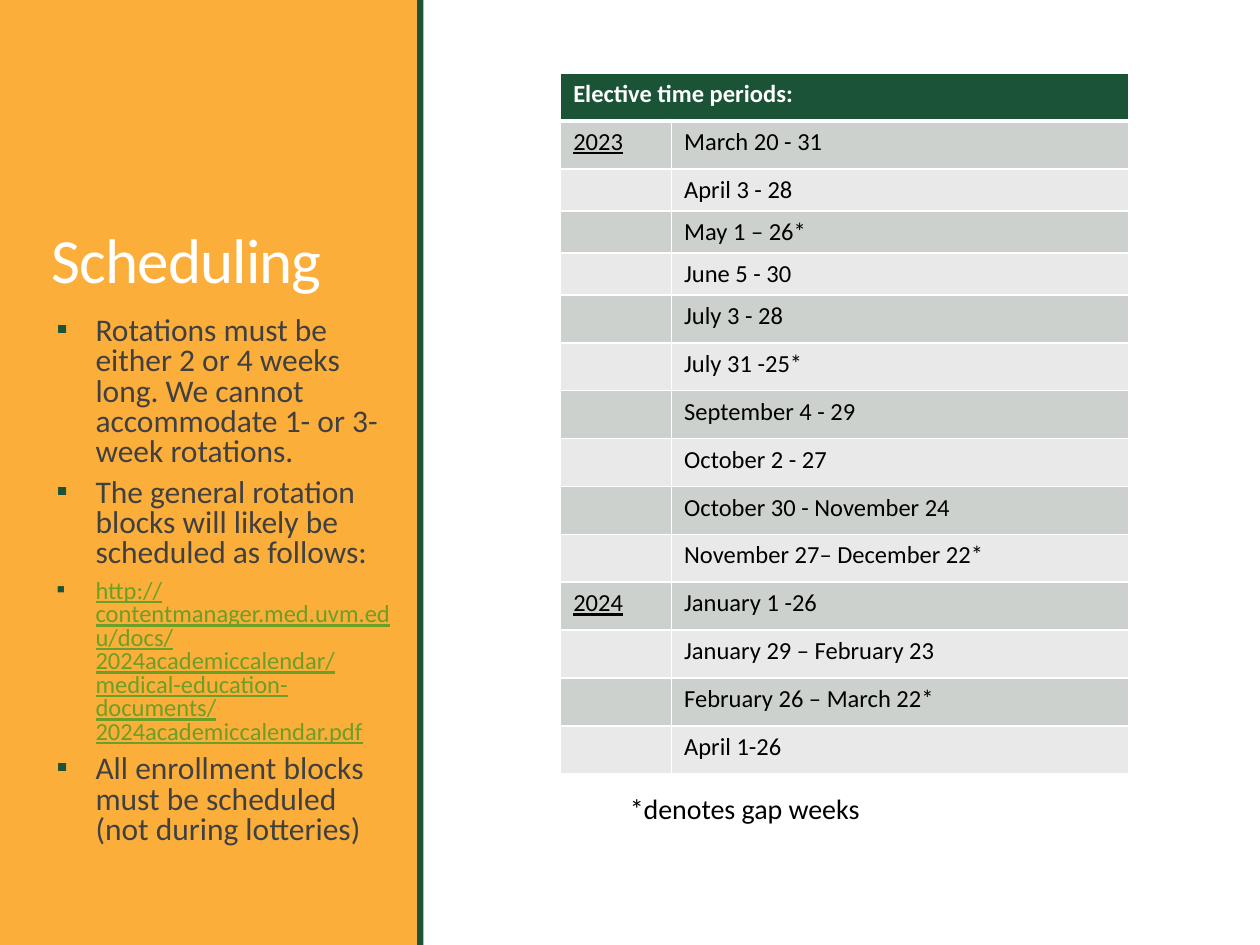
import pptx
import pptx.util
import pptx.dml.color
import pptx.enum.shapes
import pptx.enum.text
import pptx.oxml.ns
from lxml import etree

Inches = pptx.util.Inches
Pt = pptx.util.Pt
GREEN, WHITE, GREY, LINK = "1B5337", "FFFFFF", "404040", "6B9F25"
BANDS = ["CDD1CE", "E8E9E8"]
NOTES = [
    ("Rotations must be either 2 or 4 weeks long. We cannot accommodate 1- or 3-week rotations.", 18, GREY),
    ("The general rotation blocks will likely be scheduled as follows:", 18, GREY),
    ("http://contentmanager.med.uvm.edu/docs/2024academiccalendar/medical-education-documents/2024academiccalendar.pdf", 14, LINK),
    ("All enrollment blocks must be scheduled (not during lotteries)", 18, GREY),
]
YEARS = {
    "2023": [
        "March 20 - 31", "April 3 - 28", "May 1 – 26*", "June 5 - 30",
        "July 3 - 28", "July 31 -25*", "September 4 - 29", "October 2 - 27",
        "October 30 - November 24", "November 27– December 22*",
    ],
    "2024": ["January 1 -26", "January 29 – February 23", "February 26 – March 22*", "April 1-26"],
}


def color(code):
    return pptx.dml.color.RGBColor.from_string(code)


def node(parent, tag, **attrs):
    return etree.SubElement(parent, pptx.oxml.ns.qn(tag), attrs)


def style(para, size, code, bold=False, line=False):
    for run in para.runs:
        font = run.font
        font.name, font.size = "Calibri", Pt(size)
        font.bold, font.underline = bold, line
        font.color.rgb = color(code)


def add_bar(slide, left, width, code):
    bar = slide.shapes.add_shape(
        pptx.enum.shapes.MSO_SHAPE.RECTANGLE, Inches(left), 0, Inches(width), Inches(7.5))
    bar.shadow.inherit = False
    bar.fill.solid()
    bar.fill.fore_color.rgb = color(code)
    bar.line.fill.background()


def set_title(slide, text):
    title = slide.shapes.title
    title.left, title.top = Inches(0.31), Inches(1.79)
    title.width, title.height = Inches(2.62), Inches(0.98)
    frame = title.text_frame
    frame.text = text
    frame.vertical_anchor = pptx.enum.text.MSO_ANCHOR.TOP
    para = frame.paragraphs[0]
    para.alignment = pptx.enum.text.PP_ALIGN.LEFT
    para.line_spacing = 0.85
    style(para, 36, WHITE)
    para.runs[0].font._element.set("spc", "-50")


def add_box(slide, left, top, width, height):
    box = slide.shapes.add_textbox(Inches(left), Inches(top), Inches(width), Inches(height))
    box.text_frame.word_wrap = True
    return box.text_frame


def add_bullet(para):
    props = para._p.get_or_add_pPr()
    props.set("marL", str(Inches(0.53)))
    props.set("indent", str(Inches(-0.31)))
    node(node(props, "a:buClr"), "a:srgbClr", val=GREEN)
    node(props, "a:buFont", typeface="Calibri")
    node(props, "a:buChar", char="▪")


def add_notes(slide):
    frame = add_box(slide, 0.13, 2.47, 3.11, 4.42)
    frame.text = "\n".join(text for text, size, code in NOTES)
    for i, (para, (text, size, code)) in enumerate(zip(frame.paragraphs, NOTES)):
        add_bullet(para)
        para.line_spacing = 0.8
        para.space_before = Pt(2 if i else 0)
        para.space_after = Pt(4)
        style(para, size, code, line=code == LINK)


def set_cell(cell, text, fill, code="000000", bold=False, line=False, top=1, base=1):
    props = cell._tc.get_or_add_tcPr()
    for side, width in (("L", 1), ("R", 1), ("T", top), ("B", base)):
        edge = node(props, "a:ln" + side, w=str(Pt(width)))
        node(node(edge, "a:solidFill"), "a:srgbClr", val=WHITE)
    cell.fill.solid()
    cell.fill.fore_color.rgb = color(fill)
    para = cell.text_frame.paragraphs[0]
    if text:
        para.text = text
        style(para, 14, code, bold, line)
    else:
        node(para._p, "a:endParaRPr", sz="1400")


def add_dates(slide):
    rows = [(year if i == 0 else "", date)
            for year, dates in YEARS.items() for i, date in enumerate(dates)]
    grid = slide.shapes.add_table(
        len(rows) + 1, 2, Inches(4.45), Inches(0.58), Inches(4.51), Inches(5.52)).table
    grid.columns[0].width, grid.columns[1].width = Inches(0.88), Inches(3.63)
    for i, row in enumerate(grid.rows):
        row.height = Inches(0.33 if i in (2, 3, 4) else 0.38)
    for col in range(2):
        set_cell(grid.cell(0, col), "" if col else "Elective time periods:",
                 GREEN, WHITE, bold=True, base=3)
    grid.cell(0, 0).merge(grid.cell(0, 1))
    for i, row in enumerate(rows):
        for col, text in enumerate(row):
            set_cell(grid.cell(i + 1, col), text, BANDS[i % 2],
                     line=col == 0, top=1 if i else 3)


def main():
    deck = pptx.Presentation()
    deck.slide_width, deck.slide_height = Inches(10), Inches(7.5)
    slide = deck.slides.add_slide(deck.slide_layouts[5])
    add_bar(slide, 0, 3.32, "FCAE3B")
    add_bar(slide, 3.31, 0.05, GREEN)
    tree = slide.shapes._spTree
    tree.append(slide.shapes.title._element)
    set_title(slide, "Scheduling")
    add_notes(slide)
    gap = add_box(slide, 4.9, 6.23, 2.14, 0.37)
    gap.text = "*denotes gap weeks"
    style(gap.paragraphs[0], 16, "000000")
    add_dates(slide)
    deck.save("out.pptx")


if __name__ == "__main__":
    main()
